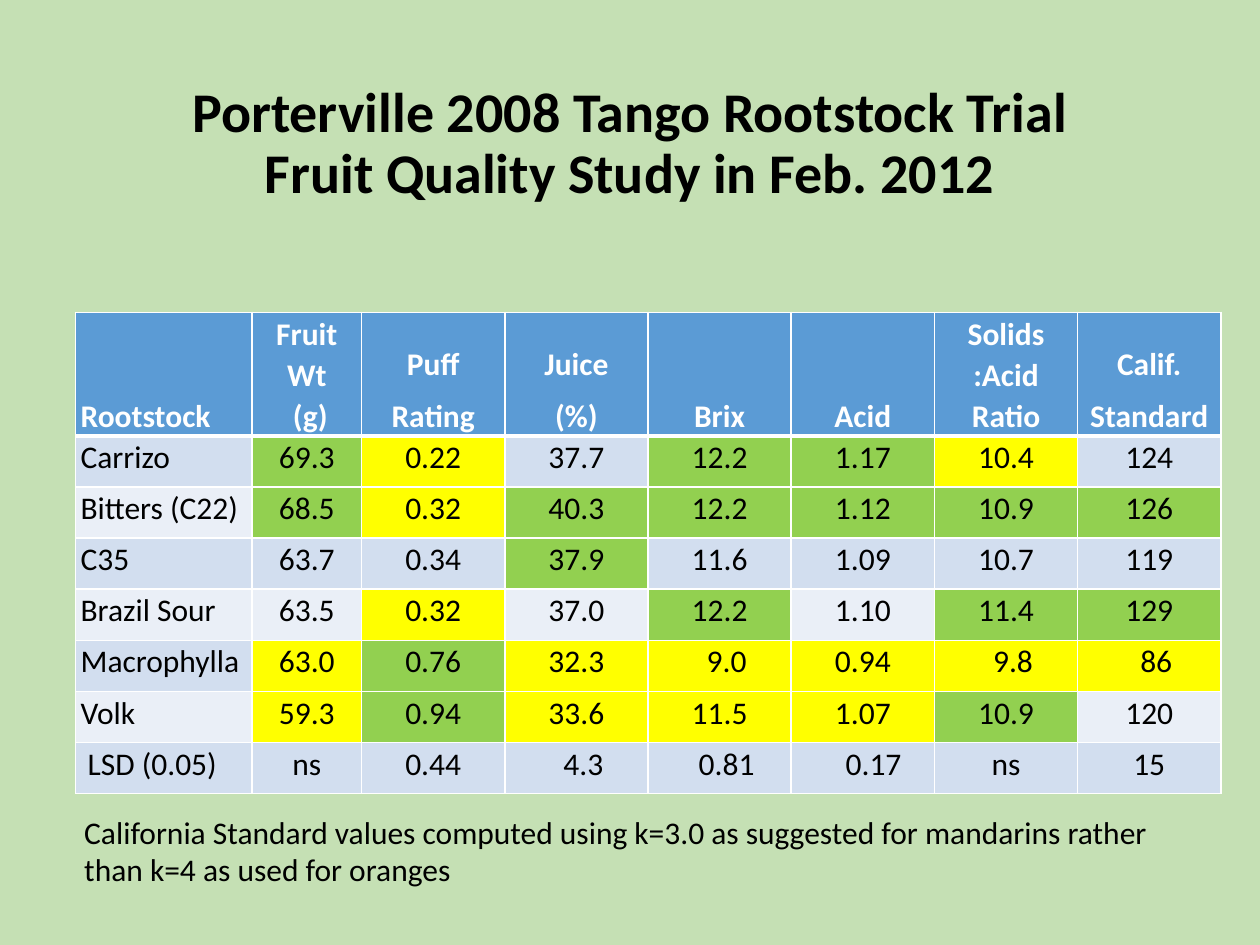
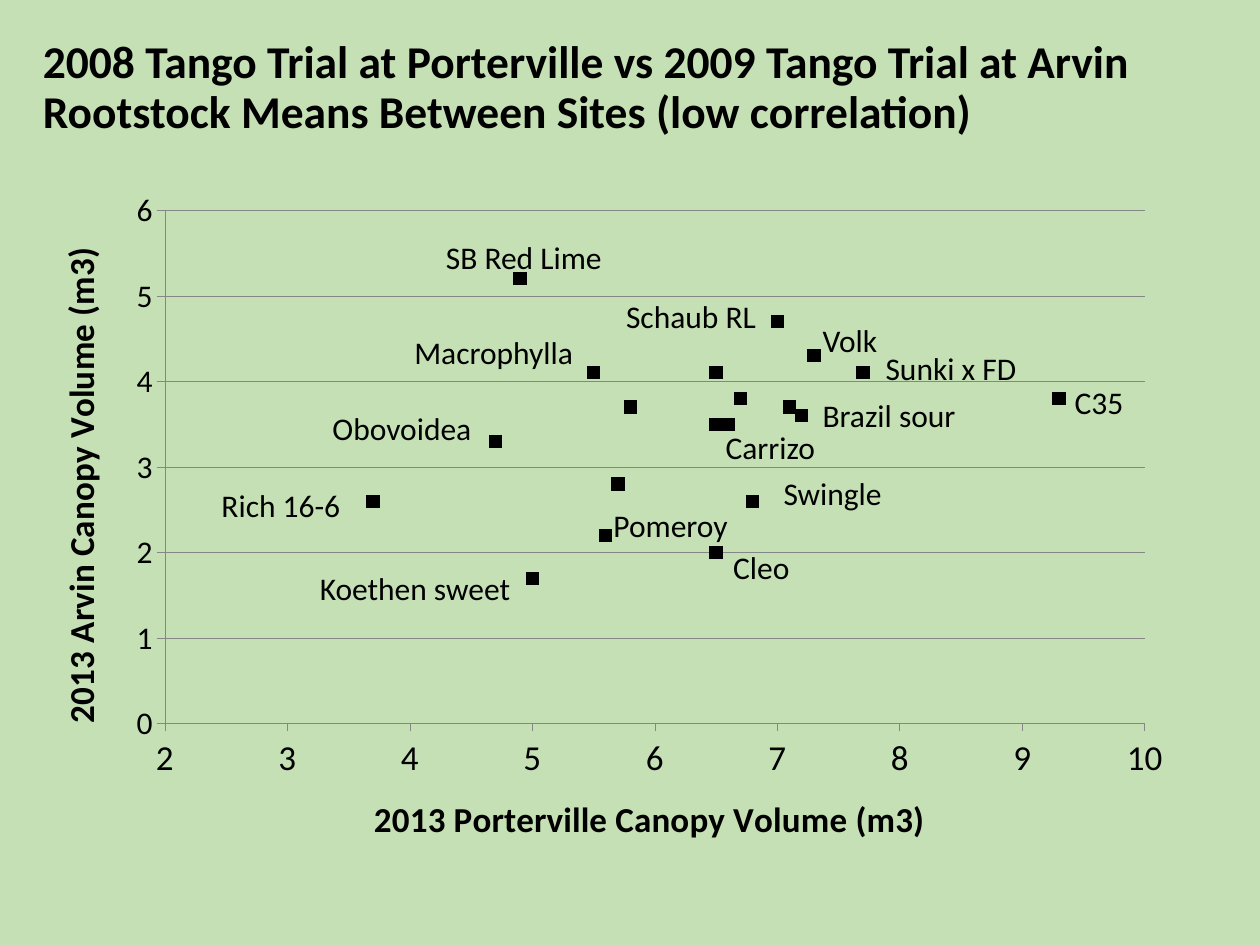
from dataclasses import dataclass

from lxml.etree import SubElement as Sub
from pptx import Presentation
from pptx.chart.data import XyChartData
from pptx.dml.color import RGBColor as Rgb
from pptx.enum.chart import XL_CHART_TYPE as Kind, XL_MARKER_STYLE as Mark
from pptx.enum.chart import XL_TICK_MARK as Tick
from pptx.enum.text import MSO_ANCHOR as Anchor, MSO_AUTO_SIZE as Fit, PP_ALIGN as Align
from pptx.oxml import parse_xml
from pptx.oxml.ns import nsdecls, qn
from pptx.util import Inches, Pt


@dataclass(frozen=True)
class Theme:
    """Colours, font, type sizes and line width of the deck."""
    font: str = "Calibri"
    back: str = "C5E0B4"
    ink: str = "000000"
    white: str = "FFFFFF"
    head: str = "5B9BD5"
    bands: tuple = ("D2DEEF", "EAEFF7")
    high: str = "92D050"
    low: str = "FFFF00"
    grid: str = "868686"
    body: int = 18
    axis: int = 20
    thin: float = 0.25


LOOK = Theme()
HEADS = ["Rootstock", "Fruit Wt\v (g)", "Puff\nRating", "Juice\n(%)", "Brix", "Acid",
         "Solids\v:Acid\nRatio", "Calif.\nStandard"]
ROWS = [
    ("Carrizo", "69.3 0.22 37.7 12.2 1.17 10.4 124", "gy.ggy."),
    ("Bitters (C22)", "68.5 0.32 40.3 12.2 1.12 10.9 126", "gyggggg"),
    ("C35", "63.7 0.34 37.9 11.6 1.09 10.7 119", "..g...."),
    ("Brazil Sour", "63.5 0.32 37.0 12.2 1.10 11.4 129", ".y.g.gg"),
    ("Macrophylla", "63.0 0.76 32.3 9.0 0.94 9.8 86", "ygyyyyy"),
    ("Volk", "59.3 0.94 33.6 11.5 1.07 10.9 120", "ygyyyg."),
    (" LSD (0.05)", "ns 0.44 4.3 0.81 0.17 ns 15", "......."),
]
SHIFTS = {(5, 4): 0.11, (5, 6): 0.11, (5, 7): 0.11,
          (7, 3): 0.11, (7, 4): 0.11, (7, 5): 0.17}
POINTS = [
    (4.9, 5.2), (7, 4.7), (None, 4.6), (7.3, 4.3), (5.5, 4.1), (7.7, 4.1), (6.5, 4.1),
    (6.7, 3.8), (9.3, 3.8), (7.1, 3.7), (5.8, 3.7), (7.2, 3.6), (6.6, 3.5), (6.5, 3.5),
    (4.7, 3.3), (None, 2.9), (5.7, 2.8), (6.8, 2.6), (3.7, 2.6), (5.6, 2.2), (6.5, 2),
    (5, 1.7),
]
LABELS = [
    ("SB Red Lime", 3.11, 0.45, 1.45), ("Obovoidea", 2.21, 1.81, 1.32),
    ("Macrophylla", 2.86, 1.2, 1.47), ("Volk", 6.1, 1.11, 0.64),
    ("Schaub RL", 4.54, 0.92, 1.25), ("Rich 16-6", 1.33, 2.42, 1.16),
    ("Koethen sweet", 2.11, 3.08, 1.73), ("C35", 8.1, 1.6, 0.59),
    ("Swingle", 5.79, 2.32, 0.99), ("Sunki x FD", 6.6, 1.33, 1.25),
    ("Brazil sour", 6.1, 1.7, 1.27), ("Carrizo", 5.33, 1.96, 0.92),
    ("Cleo", 5.39, 2.91, 0.65), ("Pomeroy", 4.44, 2.58, 1.12),
]


def place(box):
    """Turn a box in inches into lengths."""
    return [Inches(side) for side in box]


def style(font, size, color=LOOK.ink, bold=False):
    """Set the face, size, colour and weight of a font."""
    font.name, font.size, font.bold = LOOK.font, Pt(size), bold
    font.color.rgb = Rgb.from_string(color)


def add_title(deck, text, box, size, align):
    """Add a title-only slide and set its title."""
    slide = deck.slides.add_slide(deck.slide_layouts[5])
    title = slide.shapes.title
    title.left, title.top, title.width, title.height = place(box)
    frame = title.text_frame
    frame.text = text
    frame.auto_size, frame.vertical_anchor = Fit.NONE, Anchor.MIDDLE
    para = frame.paragraphs[0]
    para.alignment, para.line_spacing = align, 0.9
    style(para.font, size, bold=True)
    return slide


def add_text(slide, text, box, wrap):
    """Add a line or block of body text."""
    frame = slide.shapes.add_textbox(*place(box)).text_frame
    frame.text, frame.word_wrap, frame.auto_size = text, wrap, Fit.SHAPE_TO_FIT_TEXT
    style(frame.paragraphs[0].font, LOOK.body)


def add_edge(cell, row):
    """Draw white cell borders, thick under the header."""
    props = cell._tc.get_or_add_tcPr()
    widths = {"L": 1, "R": 1, "T": 3 if row == 1 else 1, "B": 3 if row == 0 else 1}
    for spot, (side, width) in enumerate(widths.items()):
        props.insert(spot, parse_xml(
            f'<a:ln{side} {nsdecls("a")} w="{Pt(width)}"><a:solidFill>'
            f'<a:srgbClr val="{LOOK.white}"/></a:solidFill></a:ln{side}>'))


def fill_cell(cell, text, row, col, color):
    """Write and format one table cell."""
    head = row == 0
    cell.text = text
    cell.vertical_anchor = Anchor.BOTTOM if head else Anchor.TOP
    inset = 0 if col == 2 else 0.04
    cell.margin_left = Inches(inset + SHIFTS.get((row, col), 0))
    cell.margin_right = Inches(inset)
    cell.margin_top = cell.margin_bottom = 0
    gap = Pt(0 if head and col == 6 else 3)
    for para in cell.text_frame.paragraphs:
        para.alignment = Align.CENTER if col else Align.LEFT
        para.line_spacing, para.space_before, para.space_after = 1.07, gap, gap
        style(para.font, LOOK.body, LOOK.white if head else LOOK.ink, head)
    cell.fill.solid()
    cell.fill.fore_color.rgb = Rgb.from_string(color)
    add_edge(cell, row)


def add_grid(slide, box):
    """Add the fruit quality table."""
    table = slide.shapes.add_table(len(ROWS) + 1, len(HEADS), *place(box)).table
    first = [1.4, 0.87]
    rest = len(HEADS) - len(first)
    widths = first + [(box[2] - sum(first)) / rest] * rest
    for col, width in zip(table.columns, widths):
        col.width = Inches(width)
    top = 0.97
    for row, line in enumerate(table.rows):
        line.height = Inches((box[3] - top) / len(ROWS) if row else top)
    for col, text in enumerate(HEADS):
        fill_cell(table.cell(0, col), text, 0, col, LOOK.head)
    for row, (name, vals, marks) in enumerate(ROWS, 1):
        tints = {"g": LOOK.high, "y": LOOK.low, ".": LOOK.bands[(row - 1) % 2]}
        for col, (text, mark) in enumerate(zip([name, *vals.split()], "." + marks)):
            fill_cell(table.cell(row, col), text, row, col, tints[mark])


def set_line(line):
    """Make a chart line thin and grey."""
    line.color.rgb, line.width = Rgb.from_string(LOOK.grid), Pt(LOOK.thin)


def set_axis(axis, text, low, high, size):
    """Format one chart axis and its title."""
    axis.minimum_scale, axis.maximum_scale, axis.major_unit = low, high, 1
    axis.major_tick_mark, axis.minor_tick_mark = Tick.OUTSIDE, Tick.NONE
    style(axis.tick_labels.font, size)
    frame = axis.axis_title.text_frame
    frame.text = text
    style(frame.paragraphs[0].font, LOOK.axis, bold=True)
    set_line(axis.format.line)


def set_plot(chart):
    """Fix the inner plot area and clear the chart fill."""
    root = chart._chartSpace.find(qn("c:chart"))
    root.addnext(parse_xml(f'<c:spPr {nsdecls("c", "a")}><a:noFill/>'
                           '<a:ln><a:noFill/></a:ln></c:spPr>'))
    area = root.find(qn("c:plotArea"))
    for old in area.findall(qn("c:layout")):
        area.remove(old)
    layout = parse_xml(f'<c:layout {nsdecls("c")}><c:manualLayout/></c:layout>')
    area.insert(0, layout)
    parts = {"layoutTarget": "inner", "xMode": "edge", "yMode": "edge",
             "x": 0.109, "y": 0.052, "w": 0.866, "h": 0.759}
    for tag, val in parts.items():
        Sub(layout[0], qn(f"c:{tag}")).set("val", str(val))


def add_plot(slide, box):
    """Add the scatter chart with its rootstock labels."""
    data = XyChartData()
    series = data.add_series("Series 1")
    for x, y in POINTS:
        series.add_data_point(x, y)
    chart = slide.shapes.add_chart(Kind.XY_SCATTER, *place(box), data).chart
    chart.has_title = chart.has_legend = False
    style(chart.font, LOOK.body)
    set_axis(chart.category_axis, "2013 Porterville Canopy Volume (m3)", 2, 10, LOOK.axis)
    set_axis(chart.value_axis, "2013 Arvin Canopy Volume (m3)", 0, 6, LOOK.body)
    chart.category_axis.has_major_gridlines = False
    chart.value_axis.has_major_gridlines = True
    set_line(chart.value_axis.major_gridlines.format.line)
    plot = chart.plots[0]
    plot.vary_by_categories = False
    dots = plot.series[0]
    dots.smooth = False
    dots.format.line.fill.background()
    dots.marker.style, dots.marker.size = Mark.SQUARE, 7
    for fill in (dots.marker.format.fill, dots.marker.format.line.fill):
        fill.solid()
        fill.fore_color.rgb = Rgb.from_string(LOOK.ink)
    set_plot(chart)
    for text, left, top, width in LABELS:
        add_text(slide, text, (box[0] + left, box[1] + top, width, 0.4), False)


def main():
    """Build and save the deck."""
    deck = Presentation()
    deck.slide_width, deck.slide_height = Inches(10), Inches(7.5)
    fill = deck.slide_master.background.fill
    fill.solid()
    fill.fore_color.rgb = Rgb.from_string(LOOK.back)
    fruit = add_title(deck, "Porterville 2008 Tango Rootstock Trial\v"
                      "Fruit Quality Study in Feb. 2012",
                      (0.69, 0.4, 8.62, 1.5), 32, Align.CENTER)
    add_grid(fruit, (0.6, 2.48, 9.09, 3.81))
    add_text(fruit, "California Standard values computed using k=3.0 as suggested for "
             "mandarins rather than k=4 as used for oranges", (0.57, 6.4, 9.15, 0.71), True)
    sites = add_title(deck, "2008 Tango Trial at Porterville vs 2009 Tango Trial at Arvin\v"
                      "Rootstock Means Between Sites (low correlation)",
                      (0.24, 0.18, 9.36, 1.05), 26, Align.LEFT)
    add_plot(sites, (0.33, 1.39, 8.98, 5.37))
    deck.save("out.pptx")


if __name__ == "__main__":
    main()
